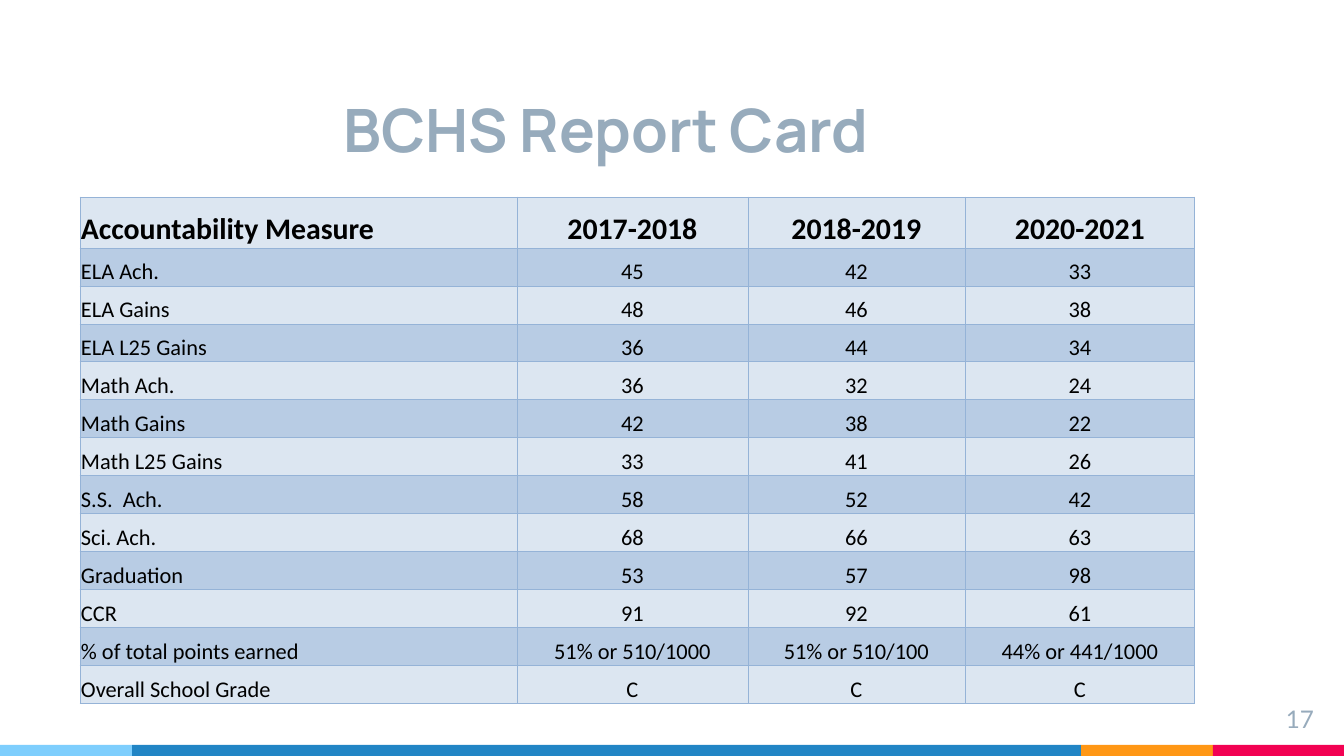
import pptx
import pptx.util
import pptx.dml.color
import pptx.enum.shapes
import pptx.enum.text
import pptx.oxml
import pptx.oxml.ns

ALIGN = pptx.enum.text.PP_ALIGN
ANCHOR = pptx.enum.text.MSO_ANCHOR
COLORS = {
    "muted": "97ABBC", "text": "000000", "border": "95B3D7",
    "light": "DCE6F1", "band": "B8CCE4",
    "sky": "7ECEFD", "blue": "2185C5", "orange": "FF9715", "pink": "F20253",
}
FOOTER_SEGMENTS = [("sky", 132), ("blue", 949), ("orange", 132), ("pink", 131)]
COLUMN_WIDTHS = [437, 231, 217, 230]
REPORT_CARD = [
    ("Accountability Measure", "2017-2018", "2018-2019", "2020-2021"),
    ("ELA Ach.", "45", "42", "33"),
    ("ELA Gains", "48", "46", "38"),
    ("ELA L25 Gains", "36", "44", "34"),
    ("Math Ach.", "36", "32", "24"),
    ("Math Gains", "42", "38", "22"),
    ("Math L25 Gains", "33", "41", "26"),
    ("S.S.  Ach.", "58", "52", "42"),
    ("Sci. Ach.", "68", "66", "63"),
    ("Graduation", "53", "57", "98"),
    ("CCR", "91", "92", "61"),
    ("% of total points earned", "51% or 510/1000", "51% or 510/100", "44% or 441/1000"),
    ("Overall School Grade", "C", "C", "C"),
]


def px(length):
    return pptx.util.Emu(round(length * 914400 / 134.4))


def rgb(name):
    return pptx.dml.color.RGBColor.from_string(COLORS[name])


class SlideBuilder:
    """Holds the current slide and draws styled elements on it."""

    def __init__(self, slide):
        self.slide = slide

    def add_text(self, frame, text, font, size, color, align, bold=False):
        paragraph = frame.paragraphs[0]
        paragraph.alignment = align
        run = paragraph.add_run()
        run.text = text
        run.font.name = font
        run.font.size = pptx.util.Pt(size)
        run.font.bold = bold
        run.font.color.rgb = rgb(color)

    def inset(self, frame, margin):
        frame.margin_left = frame.margin_right = px(margin)
        frame.margin_top = frame.margin_bottom = px(margin)
        frame.word_wrap = True
        frame.auto_size = pptx.enum.text.MSO_AUTO_SIZE.NONE

    def bar(self, left, top, width, height, color):
        segment = self.slide.shapes.add_shape(
            pptx.enum.shapes.MSO_SHAPE.RECTANGLE, px(left), px(top), px(width), px(height))
        segment.shadow.inherit = False
        segment.fill.solid()
        segment.fill.fore_color.rgb = rgb(color)
        segment.line.fill.background()

    def title(self, text, left, top, width, height):
        heading = self.slide.shapes.title
        heading.left, heading.top = px(left), px(top)
        heading.width, heading.height = px(width), px(height)
        self.inset(heading.text_frame, 13)
        heading.text_frame.vertical_anchor = ANCHOR.BOTTOM
        self.add_text(heading.text_frame, text, "Manrope", 32, "muted", ALIGN.CENTER, True)

    def page_number(self, text, left, top, width, height):
        number = self.slide.shapes.add_textbox(px(left), px(top), px(width), px(height))
        self.inset(number.text_frame, 13)
        self.add_text(number.text_frame, text, "Lato", 13, "muted", ALIGN.RIGHT)

    def border(self, cell):
        properties = cell._tc.get_or_add_tcPr()
        for position, side in enumerate(("lnL", "lnR", "lnT", "lnB")):
            properties.insert(position, pptx.oxml.parse_xml(
                f'<a:{side} {pptx.oxml.ns.nsdecls("a")} w="6350"><a:solidFill>'
                f'<a:srgbClr val="{COLORS["border"]}"/></a:solidFill></a:{side}>'))

    def table(self, rows, left, top, widths, header_height, row_height):
        height = header_height + row_height * (len(rows) - 1)
        grid = self.slide.shapes.add_table(
            len(rows), len(widths), px(left), px(top), px(sum(widths)), px(height)).table
        for column, width in zip(grid.columns, widths):
            column.width = px(width)
        for r, values in enumerate(rows):
            header = r == 0
            grid.rows[r].height = px(header_height if header else row_height)
            for c, value in enumerate(values):
                cell = grid.cell(r, c)
                cell.margin_left = cell.margin_right = cell.margin_top = px(1)
                cell.margin_bottom = 0
                cell.vertical_anchor = ANCHOR.BOTTOM
                cell.fill.solid()
                cell.fill.fore_color.rgb = rgb("band" if r % 2 else "light")
                self.border(cell)
                self.add_text(cell.text_frame, value, "Calibri", 16 if header else 12,
                              "text", ALIGN.CENTER if c else ALIGN.LEFT, header)


def main():
    deck = pptx.Presentation()
    deck.slide_width, deck.slide_height = px(1344), px(756)
    builder = SlideBuilder(deck.slides.add_slide(deck.slide_layouts.get_by_name("Title Only")))
    left = 0
    for color, width in FOOTER_SEGMENTS:
        builder.bar(left, 745, width, 11, color)
        left += width
    builder.title("BCHS Report Card", 132, 52, 949, 126)
    builder.page_number("17", 1246, 691, 81, 46)
    builder.table(REPORT_CARD, 80, 197, COLUMN_WIDTHS, 51, 38)
    deck.save("out.pptx")


if __name__ == "__main__":
    main()
